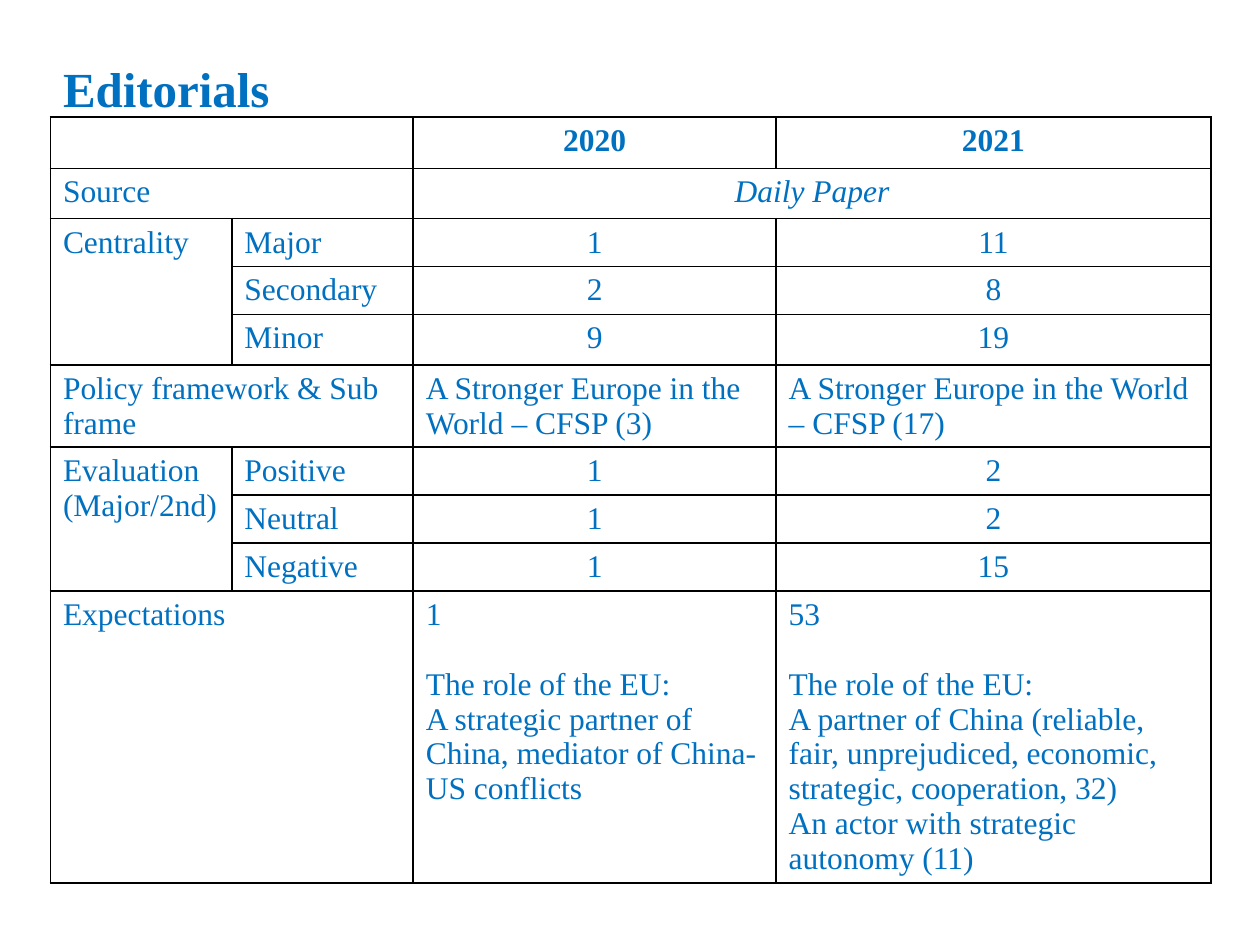
from lxml.etree import SubElement
from pptx import Presentation
from pptx.dml.color import RGBColor
from pptx.enum.text import MSO_ANCHOR as Anchor, PP_ALIGN as Align
from pptx.oxml.ns import qn
from pptx.util import Inches, Pt

COLUMN_WIDTHS = [1.44, 1.44, 2.88, 3.45]
ROW_HEIGHTS = [0.4, 0.4, 0.38, 0.38, 0.4, 0.65, 0.38, 0.38, 0.38, 2.32]
MERGES = [
    ((0, 0), (0, 1)), ((1, 0), (1, 1)), ((1, 2), (1, 3)), ((2, 0), (4, 0)),
    ((5, 0), (5, 1)), ((6, 0), (8, 0)), ((9, 0), (9, 1)),
]
EDITORIALS = [
    ["", "", "2020", "2021"],
    ["Source", "", "Daily Paper", ""],
    ["Centrality", "Major", "1", "11"],
    ["", "Secondary", "2", "8"],
    ["", "Minor", "9", "19"],
    ["Policy framework & Sub frame", "",
     "A Stronger Europe in the World – CFSP (3)",
     "A Stronger Europe in the World – CFSP (17)"],
    ["Evaluation (Major/2nd)", "Positive", "1", "2"],
    ["", "Neutral", "1", "2"],
    ["", "Negative", "1", "15"],
]
EXPECTATIONS = [
    ["Expectations"],
    [],
    ["1", "The role of the EU:",
     "A strategic partner of China, mediator of China-US conflicts"],
    ["53", "The role of the EU:",
     "A partner of China (reliable, fair, unprejudiced, economic, strategic, cooperation, 32)",
     "An actor with strategic autonomy (11)"],
]
HEADER_ROW, SOURCE_ROW, POLICY_ROW = 0, 1, 5


def color(value):
    """Turn a hex string into a colour."""
    return RGBColor.from_string(value)


class SlideBuilder:
    """Hold the style and the current slide."""

    font_name = "Times New Roman"
    ink = "0070C0"
    rule = "000000"

    def __init__(self, slide):
        """Keep the slide that is being built."""
        self.slide = slide

    def run(self, paragraph, text, size=18, bold=False, italic=False):
        """Add one styled run."""
        run = paragraph.add_run()
        run.text = text
        run.font.name = self.font_name
        run.font.size = Pt(size)
        run.font.bold = bold
        run.font.italic = italic
        run.font.color.rgb = color(self.ink)

    def title(self, text, left, top, width, height):
        """Place and fill the title placeholder."""
        heading = self.slide.shapes.title
        heading.left, heading.top = Inches(left), Inches(top)
        heading.width, heading.height = Inches(width), Inches(height)
        heading.text_frame.vertical_anchor = Anchor.MIDDLE
        paragraph = heading.text_frame.paragraphs[0]
        paragraph.alignment = Align.LEFT
        paragraph.line_spacing = 0.9
        self.run(paragraph, text, size=28, bold=True)

    def borders(self, cell):
        """Draw a thin rule on every side of a cell."""
        properties = cell._tc.get_or_add_tcPr()
        for side in ("lnL", "lnR", "lnT", "lnB"):
            line = SubElement(properties, qn(f"a:{side}"), w=str(Pt(1)))
            fill = SubElement(line, qn("a:solidFill"))
            SubElement(fill, qn("a:srgbClr"), val=self.rule)

    def cell_text(self, cell, lines, align=Align.LEFT, **style):
        """Write lines into a cell, with a gap after the leading count."""
        for index, line in enumerate(lines):
            frame = cell.text_frame
            paragraph = frame.add_paragraph() if index else frame.paragraphs[0]
            paragraph.alignment = align
            if index == 1:
                paragraph.space_before = Pt(20)
            self.run(paragraph, line, **style)

    def table(self, left, top):
        """Add the editorials table."""
        table = self.slide.shapes.add_table(
            len(ROW_HEIGHTS), len(COLUMN_WIDTHS), Inches(left), Inches(top),
            Inches(sum(COLUMN_WIDTHS)), Inches(sum(ROW_HEIGHTS))).table
        table.first_row = table.horz_banding = False
        for column, width in zip(table.columns, COLUMN_WIDTHS):
            column.width = Inches(width)
        for row, height in zip(table.rows, ROW_HEIGHTS):
            row.height = Inches(height)
        for start, end in MERGES:
            table.cell(*start).merge(table.cell(*end))
        content = [[[text] if text else [] for text in row] for row in EDITORIALS]
        for r, row in enumerate(content + [EXPECTATIONS]):
            for c, lines in enumerate(row):
                cell = table.cell(r, c)
                self.borders(cell)
                cell.fill.background()
                centred = c > 1 and r not in (POLICY_ROW, len(EDITORIALS))
                self.cell_text(
                    cell, lines, Align.CENTER if centred else Align.LEFT,
                    bold=r == HEADER_ROW, italic=r == SOURCE_ROW and c == 2)


def main():
    """Build and save the slide."""
    deck = Presentation()
    deck.slide_width, deck.slide_height = Inches(10), Inches(7.5)
    builder = SlideBuilder(deck.slides.add_slide(deck.slide_layouts[5]))
    builder.title("Editorials", 0.4, 0, 8.62, 1.45)
    builder.table(0.4, 0.93)
    deck.save("out.pptx")


if __name__ == "__main__":
    main()
